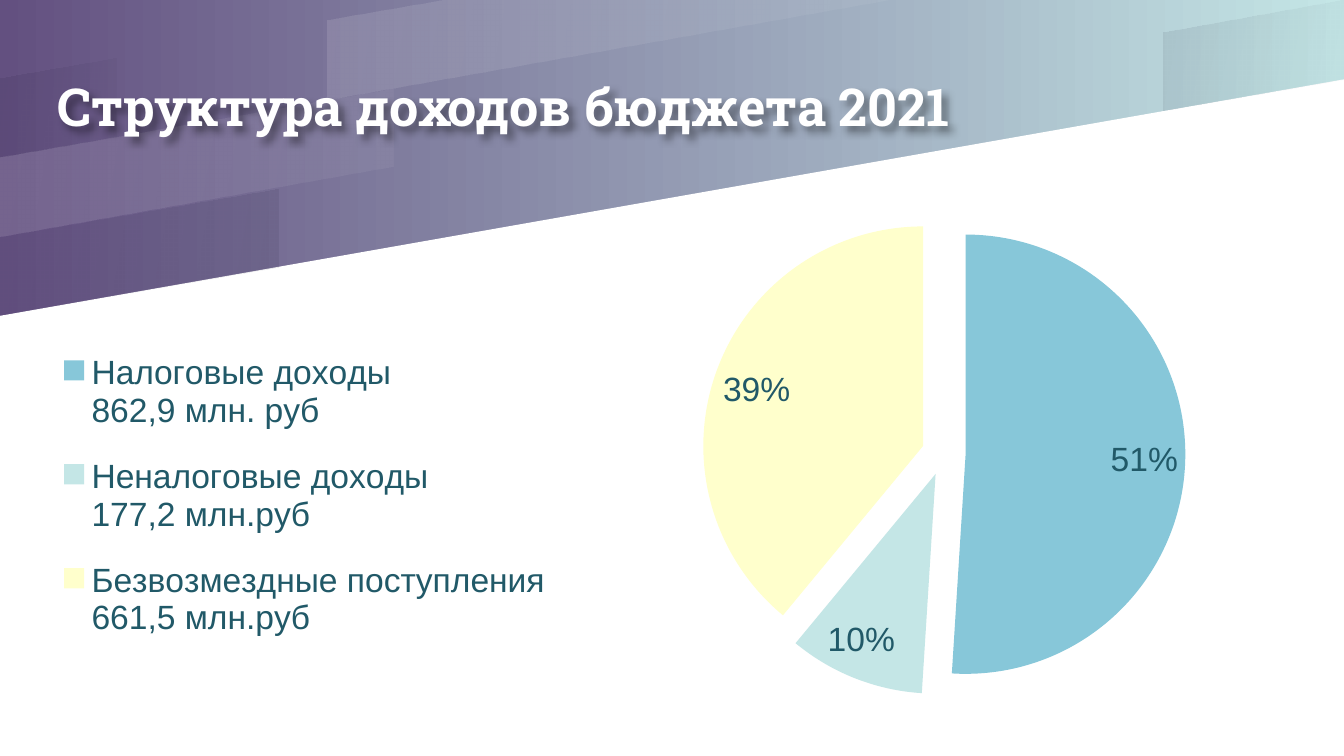
from lxml import etree
from pptx import Presentation
from pptx.chart.data import CategoryChartData
from pptx.dml.color import RGBColor
from pptx.enum.chart import XL_CHART_TYPE, XL_LABEL_POSITION, XL_LEGEND_POSITION
from pptx.enum.text import MSO_ANCHOR, MSO_AUTO_SIZE, PP_ALIGN
from pptx.oxml.ns import qn
from pptx.util import Inches, Pt

PIE = XL_CHART_TYPE.PIE
BEST_FIT = XL_LABEL_POSITION.BEST_FIT
LEGEND_RIGHT = XL_LEGEND_POSITION.RIGHT
MIDDLE = MSO_ANCHOR.MIDDLE
NO_AUTO_SIZE = MSO_AUTO_SIZE.NONE
LEFT = PP_ALIGN.LEFT

WIDTH = 10
HEIGHT = WIDTH * 9 / 16
TITLE_ONLY = 5
PURPLE, MINT, WHITE, DARK = "635080", "C4E6E6", "FFFFFF", "00001A"
TEXT_COLOR = "215968"

# Slanted bands: corner points, colour, opacity at both ends in percent
BANDS = [
    ([(3.32, 0), (2.44, 0.15), (2.44, 0.74), (6.65, 0)], WHITE, (12, 5)),
    ([(0, 0.58), (0, 1.17), (0.87, 1.02), (0.87, 0.43)], DARK, (8, 2)),
    ([(0, 1.76), (0, 2.35), (2.07, 1.99), (2.07, 1.4)], DARK, (2, 8)),
    ([(10, 0), (9.99, 0), (8.66, 0.24), (8.66, 0.82), (10, 0.59)], DARK, (8, 2)),
    ([(0, 1.17), (0, 1.76), (2.93, 1.24), (2.93, 0.66)], WHITE, (12, 5)),
]

# Income source, share in percent, slice colour
INCOME = [
    ("Налоговые доходы\n862,9 млн. руб", 51, "87C7D9"),
    ("Неналоговые доходы\n177,2 млн.руб", 10, MINT),
    ("Безвозмездные поступления\n661,5 млн.руб", 39, "FFFFCC"),
]


def color(value):
    return RGBColor.from_string(value)


def add_child(parent, tag, **attributes):
    child = etree.SubElement(parent, qn(tag))
    for name, value in attributes.items():
        child.set(name, str(value))
    return child


def fill_solid(fill, value):
    fill.solid()
    fill.fore_color.rgb = color(value)


def fill_gradient(fill, colors, angle):
    fill.gradient()
    fill.gradient_angle = angle
    for stop, value in zip(fill.gradient_stops, colors):
        stop.color.rgb = color(value)


def add_polygon(slide, points):
    corners = [(Inches(x), Inches(y)) for x, y in points]
    builder = slide.shapes.build_freeform(*corners[0])
    builder.add_line_segments(corners[1:], close=True)
    shape = builder.convert_to_shape()
    shape.shadow.inherit = False
    shape.line.fill.background()
    return shape


def add_band(slide, points, band_color, opacities):
    shape = add_polygon(slide, points)
    fill_gradient(shape.fill, [band_color] * 2, 350)
    for stop_color, opacity in zip(shape.element.iter(qn("a:srgbClr")), opacities):
        add_child(stop_color, "a:alpha", val=opacity * 1000)


def add_soft_shadow(shape):
    effects = add_child(shape.element.find(qn("p:spPr")), "a:effectLst")
    shadow = add_child(effects, "a:outerShdw", blurRad=50800, dist=38100,
                       dir=2700000, algn="tl", rotWithShape=0)
    add_child(add_child(shadow, "a:srgbClr", val="000000"), "a:alpha", val=40000)


def set_title(slide, text):
    title = slide.shapes.title
    title.left, title.top = Inches(0.43), Inches(0.01)
    title.width, title.height = Inches(7.48), Inches(1.32)
    frame = title.text_frame
    frame.margin_left = frame.margin_right = frame.margin_top = frame.margin_bottom = 0
    frame.vertical_anchor = MIDDLE
    frame.auto_size = NO_AUTO_SIZE
    paragraph = frame.paragraphs[0]
    paragraph.alignment = LEFT
    paragraph.line_spacing = 1.5
    run = paragraph.add_run()
    run.text = text
    run.font.name, run.font.size, run.font.bold = "Roboto Slab", Pt(28), True
    run.font.color.rgb = color(WHITE)
    add_soft_shadow(title)
    # Bring the title in front of the bands
    title.element.getparent().append(title.element)


def make_layout(x, y, w, h, inner=False):
    layout = etree.Element(qn("c:layout"))
    manual = add_child(layout, "c:manualLayout")
    if inner:
        add_child(manual, "c:layoutTarget", val="inner")
    for mode in ("xMode", "yMode"):
        add_child(manual, "c:" + mode, val="edge")
    for name, value in zip("xywh", (x, y, w, h)):
        add_child(manual, "c:" + name, val=value)
    return layout


def add_income_pie(slide):
    names, shares, colors = zip(*INCOME)
    data = CategoryChartData()
    data.categories = names
    data.add_series("Series 1", shares)
    frame = slide.shapes.add_chart(
        PIE, Inches(0.2), Inches(1), Inches(9.61), Inches(4.44), data)
    chart = frame.chart
    chart.has_title = False
    chart.font.name, chart.font.size = "Arial", Pt(18)
    chart.font.color.rgb = color(TEXT_COLOR)

    # Legend on the left, pie on the right
    chart.has_legend = True
    chart.legend.position = LEGEND_RIGHT
    chart.legend.include_in_layout = False
    root = chart.element
    for layout in list(root.iter(qn("c:layout"))):
        layout.getparent().remove(layout)
    root.find(".//" + qn("c:legendPos")).addnext(make_layout(0.02, 0.32, 0.39, 0.57))
    root.find(".//" + qn("c:plotArea")).insert(
        0, make_layout(0.43, 0.13, 0.56, 0.81, inner=True))

    # Separated slices
    plot = chart.plots[0]
    plot.vary_by_categories = True
    explosion = etree.Element(qn("c:explosion"))
    explosion.set("val", "10")
    root.find(".//" + qn("c:ser")).find(qn("c:tx")).addnext(explosion)
    for index, value in enumerate(colors):
        slice_format = plot.series[0].points[index].format
        fill_solid(slice_format.fill, value)
        slice_format.line.fill.background()

    # Percent labels
    plot.has_data_labels = True
    labels = plot.data_labels
    labels.show_value = False
    labels.show_percentage = True
    labels.number_format, labels.number_format_is_linked = "0%", False
    labels.position = BEST_FIT


def main():
    presentation = Presentation()
    presentation.slide_width = Inches(WIDTH)
    presentation.slide_height = Inches(HEIGHT)
    slide = presentation.slides.add_slide(presentation.slide_layouts[TITLE_ONLY])

    # Gradient header cut off by a white slanted area
    fill_gradient(slide.background.fill, (PURPLE, MINT), 0)
    white_area = add_polygon(
        slide, [(0, HEIGHT), (WIDTH, HEIGHT), (WIDTH, 0.59), (0, 2.35)])
    fill_solid(white_area.fill, WHITE)
    for band in BANDS:
        add_band(slide, *band)

    set_title(slide, "Структура доходов бюджета 2021")
    add_income_pie(slide)
    presentation.save("out.pptx")


if __name__ == "__main__":
    main()
